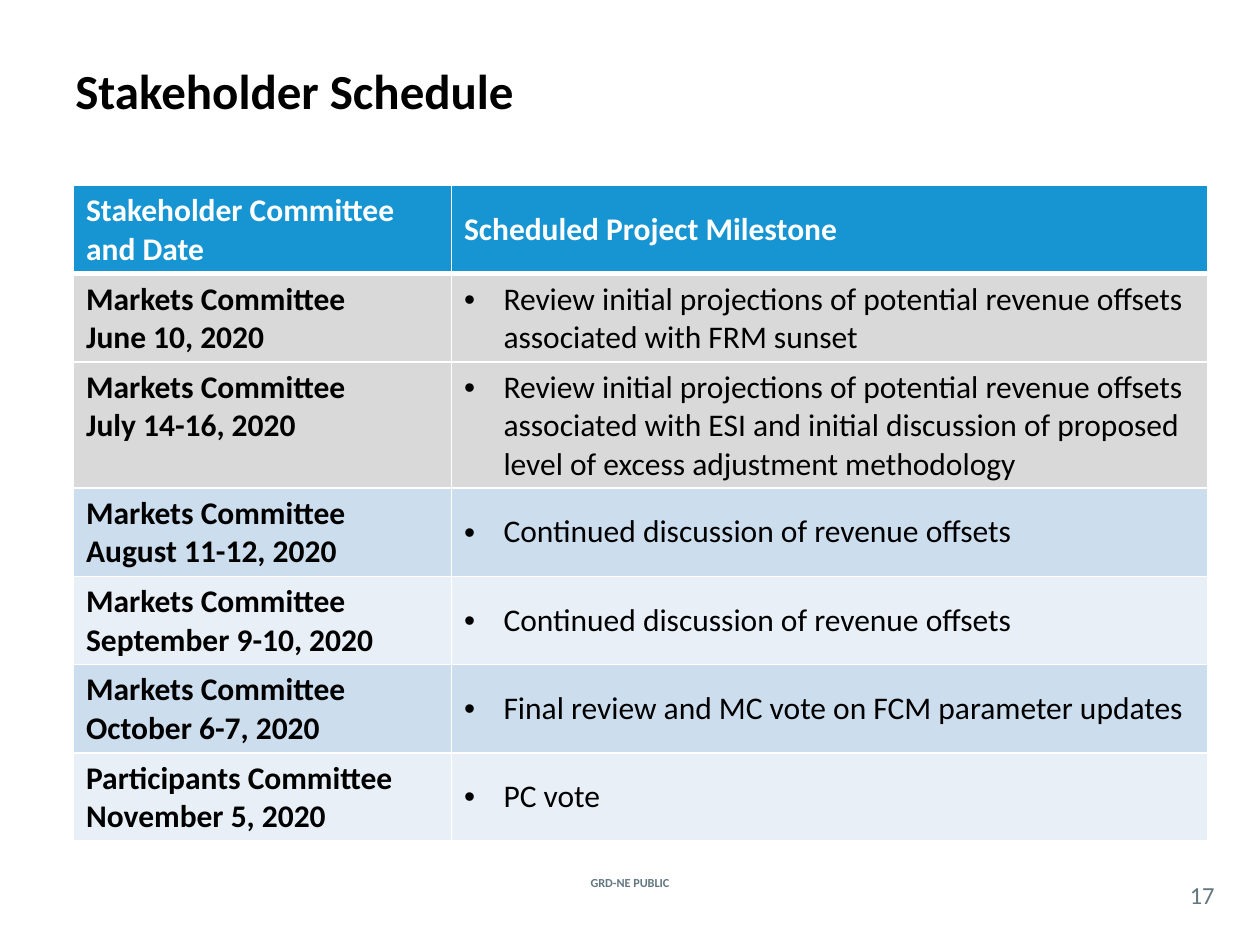
"""Build the stakeholder schedule slide."""
from lxml import etree
from pptx import Presentation
from pptx.dml.color import RGBColor
from pptx.enum import text
from pptx.oxml import ns
from pptx.util import Pt

FONT = "Calibri"
COLORS = {
    "text": "000000", "white": "FFFFFF", "footer": "62777F", "header": "1795D2",
    "done": "D9D9D9", "band_dark": "CCDDEE", "band_light": "E8EFF7",
}
HEADINGS = ("Stakeholder Committee and Date", "Scheduled Project Milestone")
MILESTONES = [
    ("Markets Committee", "June 10, 2020", "done", 45,
     "Review initial projections of potential revenue offsets associated with FRM sunset"),
    ("Markets Committee", "July 14-16, 2020", "done", 45,
     "Review initial projections of potential revenue offsets associated with ESI "
     "and initial discussion of proposed level of excess adjustment methodology"),
    ("Markets Committee", "August 11-12, 2020", "band_dark", 45,
     "Continued discussion of revenue offsets"),
    ("Markets Committee", "September 9-10, 2020", "band_light", 36,
     "Continued discussion of revenue offsets"),
    ("Markets Committee", "October 6-7, 2020", "band_dark", 36,
     "Final review and MC vote on FCM parameter updates"),
    ("Participants Committee", "November 5, 2020", "band_light", 36, "PC vote"),
]


def rgb(name):
    """Return the named colour."""
    return RGBColor.from_string(COLORS[name])


def style_text(tf, size, color, bold=False, align=None):
    """Format every run of a text frame alike."""
    for p in tf.paragraphs:
        p.alignment = align
        for r in p.runs:
            r.font.name = FONT
            r.font.size = Pt(size)
            r.font.bold = bold
            r.font.color.rgb = rgb(color)


def add_label(s, box, words, size, color, bold=False, align=None, inset=None):
    """Add a vertically centred text box."""
    tf = s.shapes.add_textbox(*map(Pt, box)).text_frame
    tf.word_wrap = True
    tf.vertical_anchor = text.MSO_ANCHOR.MIDDLE
    if inset is not None:
        tf.margin_left = tf.margin_right = tf.margin_top = tf.margin_bottom = Pt(inset)
    tf.text = words
    style_text(tf, size, color, bold, align)


def set_borders(cell, top=1, bottom=1):
    """Draw white borders of the given widths round a cell."""
    tc_pr = cell._tc.get_or_add_tcPr()
    widths = {"lnL": 1, "lnR": 1, "lnT": top, "lnB": bottom}
    for i, (tag, width) in enumerate(widths.items()):
        ln = etree.Element(ns.qn(f"a:{tag}"), w=str(Pt(width)))
        fill = etree.SubElement(ln, ns.qn("a:solidFill"))
        etree.SubElement(fill, ns.qn("a:srgbClr"), val=COLORS["white"])
        tc_pr.insert(i, ln)


def add_bullet(p, indent):
    """Give a paragraph a round bullet with a hanging indent."""
    p_pr = p._p.get_or_add_pPr()
    p_pr.set("marL", str(Pt(indent)))
    p_pr.set("indent", str(-Pt(indent)))
    etree.SubElement(p_pr, ns.qn("a:buFont"), typeface="Arial")
    etree.SubElement(p_pr, ns.qn("a:buChar"), char="•")


def fill_cell(cell, words, fill, color="text", bold=False, middle=True, bullet=False):
    """Put formatted text on a coloured cell."""
    cell.fill.solid()
    cell.fill.fore_color.rgb = rgb(fill)
    cell.vertical_anchor = text.MSO_ANCHOR.MIDDLE if middle else text.MSO_ANCHOR.TOP
    cell.text_frame.text = words
    if bullet:
        add_bullet(cell.text_frame.paragraphs[0], 22.5)
    style_text(cell.text_frame, 18, color, bold)


def add_schedule(s, box):
    """Add the table of committees, dates and milestones."""
    frame = s.shapes.add_table(len(MILESTONES) + 1, 2, *map(Pt, box))
    table = frame.table
    table.columns[0].width = Pt(box[2] / 3)
    table.columns[1].width = Pt(box[2] * 2 / 3)
    table.rows[0].height = Pt(36)
    for col, heading in enumerate(HEADINGS):
        cell = table.cell(0, col)
        fill_cell(cell, heading, "header", "white", bold=True)
        set_borders(cell, bottom=3)
    for row, (committee, date, fill, height, milestone) in enumerate(MILESTONES, 1):
        table.rows[row].height = Pt(height)
        who, what = table.rows[row].cells
        fill_cell(who, f"{committee}\n{date}", fill, bold=True, middle=False)
        fill_cell(what, milestone, fill, bullet=True)
        for cell in (who, what):
            set_borders(cell, top=3 if row == 1 else 1)
    frame.height = Pt(box[3])


def add_footer(s, box):
    """Add the classification line and the slide number."""
    left, top, width, height = box
    center = text.PP_ALIGN.CENTER
    add_label(s, (left + (width - 106) / 2, top, 106, 12), "GRD-NE PUBLIC", 7,
              "footer", bold=True, align=center)
    add_label(s, (left + width - 48, top + height - 21, 30, 21), "17", 14,
              "footer", align=center, inset=0)


def main():
    """Build and save the slide."""
    prs = Presentation()
    prs.slide_width, prs.slide_height = Pt(720), Pt(540)
    s = prs.slides.add_slide(prs.slide_layouts[6])
    add_label(s, (36, 30.5, 648, 41.5), "Stakeholder Schedule", 28, "text", bold=True)
    add_schedule(s, (42, 106, 648, 374.4))
    add_footer(s, (0, 498.5, 720, 23.5))
    prs.save("out.pptx")


if __name__ == "__main__":
    main()
